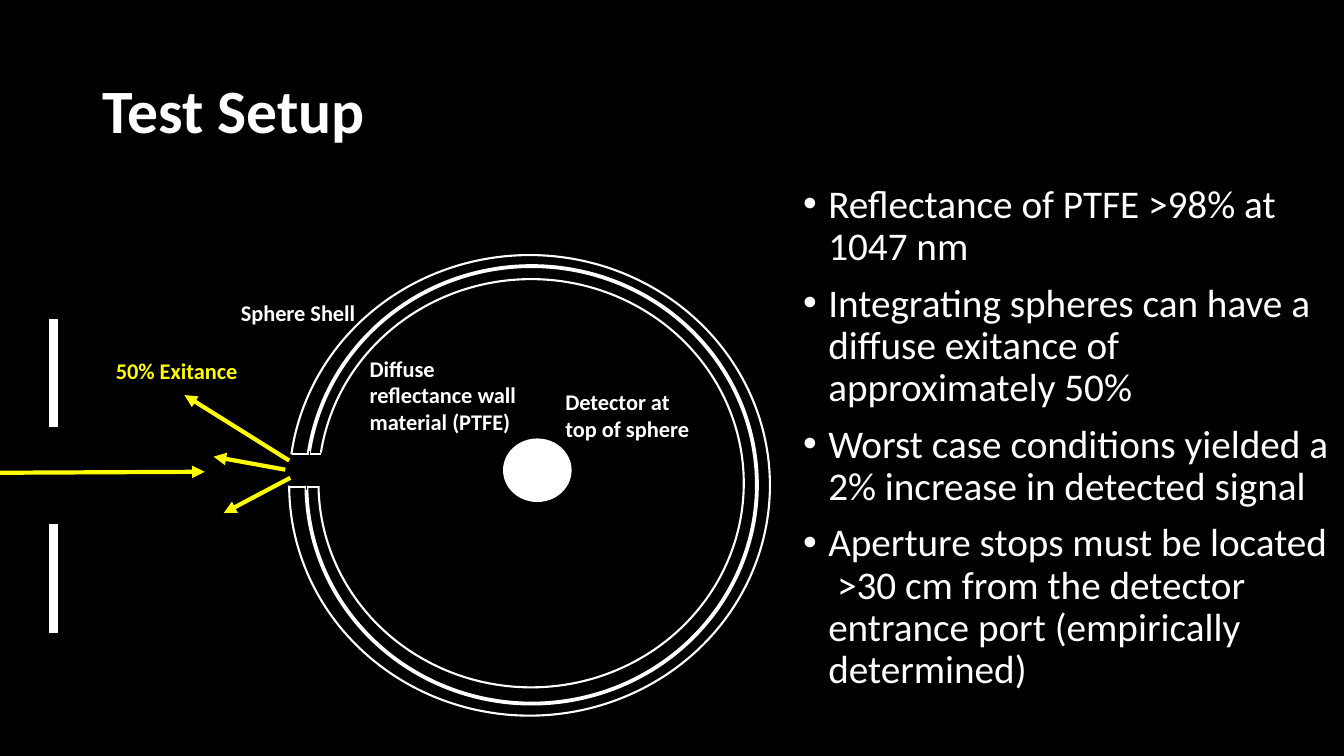
from pptx import Presentation
from pptx.dml.color import RGBColor
from pptx.enum.shapes import MSO_CONNECTOR as CONN, MSO_SHAPE as SHAPE
from pptx.enum.text import MSO_ANCHOR as ANCHOR
from pptx.oxml.ns import qn
from pptx.util import Pt
from lxml.etree import SubElement

BLACK = RGBColor(0x00, 0x00, 0x00)
WHITE = RGBColor(0xFF, 0xFF, 0xFF)
YELLOW = RGBColor(0xFF, 0xFF, 0x00)

TITLE = {"size": Pt(44), "bold": True}
BODY = {"size": Pt(28)}
LABEL = {"size": Pt(16), "bold": True}
BODY_SPACING = {"line_spacing": 0.9, "space_before": Pt(10)}

FINDINGS = [
    "Reflectance of PTFE >98% at 1047 nm",
    "Integrating spheres can have a diffuse exitance of approximately 50%",
    "Worst case conditions yielded a 2% increase in detected signal",
    "Aperture stops must be located  >30 cm from the detector entrance port "
    "(empirically determined)",
]

# left, top, width, height, start angle, end angle, line width
SPHERE_WALLS = [
    (206.6, 182.2, 343.4, 329, 187.41, 179.95, 1.5),
    (227.5, 199.4, 303.8, 291.6, 188.28, 179.2, 1.5),
    (218.9, 190.1, 321.8, 312.5, 187.98, 179.73, 2.75),
]

# x1, y1, x2, y2
PORT_EDGES = [(208.8, 324, 229, 324), (207.4, 347.8, 227.5, 347.8)]
PORT_GAPS = [(221, 326.9, 221, 321.8), (218.9, 343.4, 218.9, 349.9)]
APERTURE_STOPS = [(38.2, 228.2, 38.2, 305.3), (38.2, 374.4, 38.2, 452.2)]
BEAMS = [
    (203.8, 335.5, 152.6, 326.2),
    (207.4, 341.3, 159.8, 366.5),
    (206.6, 329, 131.8, 282.2),
    (0, 337.7, 146.2, 337),
]

# text, left, top, width, height, colour
LABELS = [
    ("Detector at top of sphere", 396.7, 273.6, 111.6, 84.2, WHITE),
    ("Sphere Shell", 164.9, 210.2, 111.6, 84.2, WHITE),
    ("Diffuse reflectance wall material (PTFE)", 257, 249.8, 134.6, 81.4, WHITE),
    ("50% Exitance", 75.6, 251.3, 111.6, 84.2, YELLOW),
]


def set_all(obj, values):
    for name, value in values.items():
        setattr(obj, name, value)


def add_text(slide, paragraphs, box, font, color=WHITE, spacing=None, anchor=ANCHOR.TOP):
    sp = slide.shapes.add_textbox(*map(Pt, box))
    tf = sp.text_frame
    set_all(tf, {"word_wrap": True, "vertical_anchor": anchor})
    for i, text in enumerate(paragraphs):
        p = tf.paragraphs[0] if i == 0 else tf.add_paragraph()
        set_all(p, spacing or {})
        r = p.add_run()
        r.text = text
        set_all(r.font, {"name": "Calibri", **font})
        r.font.color.rgb = color
    return sp


def add_bullets(sp):
    for p in sp.text_frame.paragraphs:
        pPr = p._p.get_or_add_pPr()
        pPr.set("marL", str(Pt(18)))
        pPr.set("indent", str(-Pt(18)))
        SubElement(pPr, qn("a:buFont"), typeface="Arial")
        SubElement(pPr, qn("a:buChar"), char="•")


def add_line(slide, ends, color, width, arrow=False):
    c = slide.shapes.add_connector(CONN.STRAIGHT, *map(Pt, ends))
    c.line.color.rgb = color
    c.line.width = Pt(width)
    if arrow:
        SubElement(c.line._get_or_add_ln(), qn("a:tailEnd"), type="triangle")
    SubElement(c._element.spPr, qn("a:effectLst"))


def add_arc(slide, left, top, width, height, start, end, line_width):
    """Draw a clockwise arc between two angles in degrees."""
    sp = slide.shapes.add_shape(SHAPE.ARC, *map(Pt, (left, top, width, height)))
    sp.shadow.inherit = False
    for i, degrees in enumerate((start, end)):
        sp.adjustments[i] = degrees * 0.6
    sp.fill.background()
    sp.line.color.rgb = WHITE
    sp.line.width = Pt(line_width)


def add_detector(slide):
    sp = slide.shapes.add_shape(SHAPE.OVAL, Pt(359.3), Pt(313.2), Pt(49), Pt(45.4))
    sp.shadow.inherit = False
    sp.fill.solid()
    sp.fill.fore_color.rgb = WHITE
    sp.line.fill.background()


def main():
    prs = Presentation()
    set_all(prs, {"slide_width": Pt(960), "slide_height": Pt(540)})
    slide = prs.slides.add_slide(prs.slide_layouts[6])
    slide.background.fill.solid()
    slide.background.fill.fore_color.rgb = BLACK

    add_text(slide, ["Test Setup"], (66, 28.8, 828, 104.4), TITLE,
             spacing={"line_spacing": 0.9}, anchor=ANCHOR.MIDDLE)
    add_bullets(add_text(slide, FINDINGS, (566.6, 128.2, 393.1, 388.1), BODY,
                         spacing=BODY_SPACING))

    for wall in SPHERE_WALLS:
        add_arc(slide, *wall)
    for edge, gap in zip(PORT_EDGES, PORT_GAPS):
        add_line(slide, edge, WHITE, 1.5)
        add_line(slide, gap, BLACK, 1)
    add_detector(slide)
    for beam in BEAMS:
        add_line(slide, beam, YELLOW, 3, arrow=True)
    for stop in APERTURE_STOPS:
        add_line(slide, stop, WHITE, 6)
    for text, *box, color in LABELS:
        add_text(slide, [text], box, LABEL, color)

    prs.save("out.pptx")


if __name__ == "__main__":
    main()
